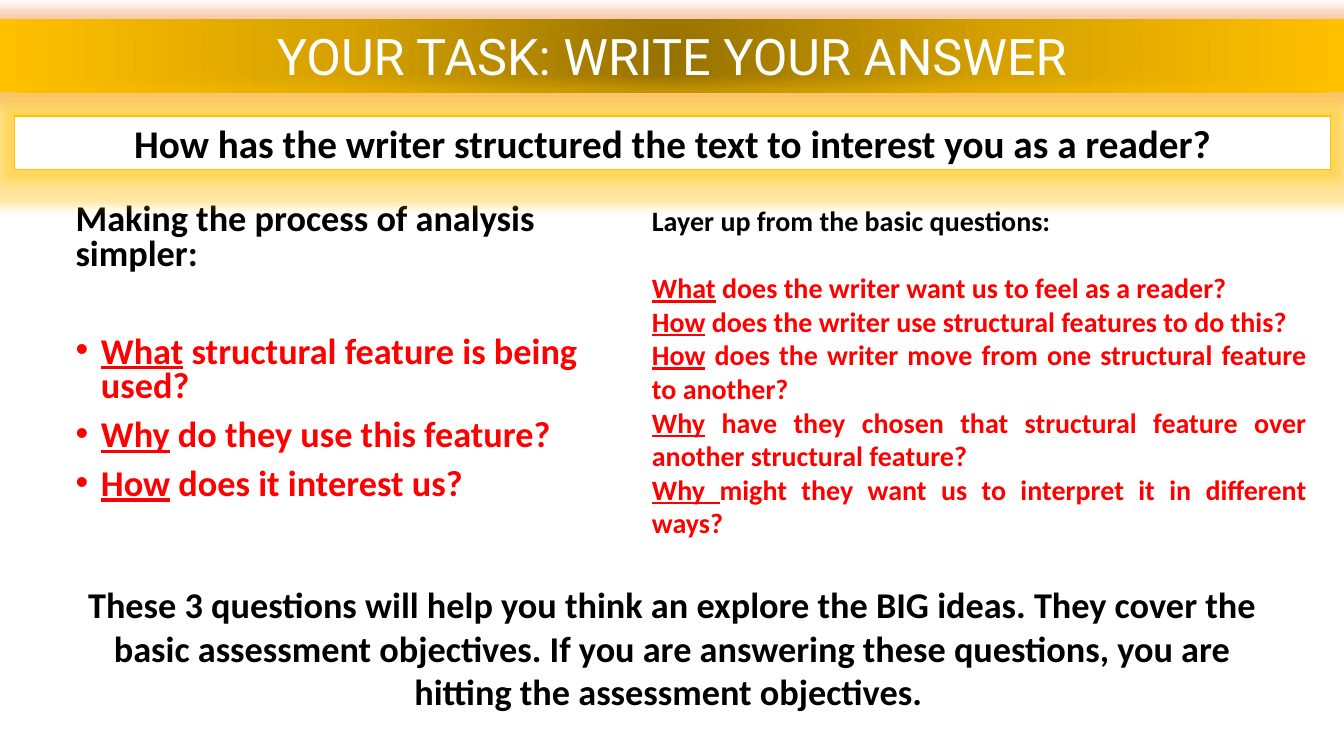
from lxml.etree import SubElement
from pptx import Presentation
from pptx.dml.color import RGBColor
from pptx.enum.shapes import MSO_SHAPE
from pptx.enum.text import MSO_ANCHOR, MSO_AUTO_SIZE, PP_ALIGN
from pptx.oxml.ns import qn
from pptx.util import Cm, Pt

BLACK, WHITE, RED, GOLD, ORANGE = "000000", "FFFFFF", "FF0000", "FFC000", "ED7D31"


def rgb(color):
    return RGBColor.from_string(color)


def place(sp, x, y, w, h):
    sp.left, sp.top, sp.width, sp.height = Cm(x), Cm(y), Cm(w), Cm(h)


def setup_frame(sp, anchor=MSO_ANCHOR.TOP):
    tf = sp.text_frame
    tf.word_wrap = True
    tf.auto_size = MSO_AUTO_SIZE.NONE
    tf.vertical_anchor = anchor
    return tf


def add_run(p, text, size, color=BLACK, font="Calibri", bold=True, underline=False):
    r = p.add_run()
    r.text = text
    r.font.name, r.font.size = font, Pt(size)
    r.font.bold, r.font.underline = bold, underline
    r.font.color.rgb = rgb(color)


def add_question(tf, key, rest, size):
    """Add a red paragraph that opens with an underlined question word."""
    p = tf.add_paragraph()
    add_run(p, key, size, RED, underline=True)
    add_run(p, rest, size, RED)
    return p


def add_glow(sp, color, radius, alpha):
    effects = SubElement(sp._element.spPr, qn("a:effectLst"))
    glow = SubElement(effects, qn("a:glow"), rad=str(Cm(radius)))
    clr = SubElement(glow, qn("a:srgbClr"), val=color)
    SubElement(clr, qn("a:alpha"), val=str(alpha * 1000))


def fill_radial(sp, stops):
    grad = SubElement(sp._element.spPr, qn("a:gradFill"), rotWithShape="1")
    gs_lst = SubElement(grad, qn("a:gsLst"))
    for pos, color in stops:
        gs = SubElement(gs_lst, qn("a:gs"), pos=str(pos * 1000))
        SubElement(gs, qn("a:srgbClr"), val=color)
    path = SubElement(grad, qn("a:path"), path="circle")
    SubElement(path, qn("a:fillToRect"), l="50000", t="50000", r="50000", b="50000")


def set_bullet(p, char=None, indent=0):
    pPr = p._p.get_or_add_pPr()
    pPr.set("marL", str(Cm(indent)))
    pPr.set("indent", str(-Cm(indent)))
    if char:
        SubElement(pPr, qn("a:buFont"), typeface="Arial")
        SubElement(pPr, qn("a:buChar"), char=char)
    else:
        SubElement(pPr, qn("a:buNone"))


def add_title(s):
    sp = s.shapes.title
    place(sp, 0, 0.48, 33.87, 1.85)
    fill_radial(sp, [(0, "977200"), (50, "D7A200"), (100, GOLD)])
    add_glow(sp, ORANGE, 0.6, 40)
    p = setup_frame(sp, MSO_ANCHOR.MIDDLE).paragraphs[0]
    p.alignment = PP_ALIGN.CENTER
    add_run(p, "YOUR TASK: WRITE YOUR ANSWER", 36, WHITE, "Roboto", bold=False)


def add_key_question(s, text):
    sp = s.shapes.add_shape(MSO_SHAPE.RECTANGLE, Cm(0.36), Cm(2.92), Cm(33.17), Cm(1.35))
    sp.fill.solid()
    sp.fill.fore_color.rgb = rgb(WHITE)
    sp.line.color.rgb = rgb(GOLD)
    sp.line.width = Pt(1)
    add_glow(sp, GOLD, 0.6, 40)
    p = setup_frame(sp, MSO_ANCHOR.MIDDLE).paragraphs[0]
    p.alignment = PP_ALIGN.CENTER
    add_run(p, text, 28)


def add_bullet_list(sp, heading, questions, size=25.9):
    place(sp, 1.65, 5, 13.59, 8.28)
    tf = setup_frame(sp)
    add_run(tf.paragraphs[0], heading, size)
    for key, rest in questions:
        add_question(tf, key, rest, size)
    for i, p in enumerate(tf.paragraphs):
        p.line_spacing = 0.8
        p.space_before = Pt(45 if i == 1 else 10)
        set_bullet(p, "•" if i else None, 0.64 if i else 0)


def add_text_box(s, x, y, w, h):
    return setup_frame(s.shapes.add_textbox(Cm(x), Cm(y), Cm(w), Cm(h)))


def add_layered_questions(s, heading, questions, size=20):
    tf = add_text_box(s, 16.18, 5, 17, 10.5)
    add_run(tf.paragraphs[0], heading, size)
    for key, rest in questions:
        add_question(tf, key, rest, size)
    for p in tf.paragraphs:
        p.alignment = PP_ALIGN.JUSTIFY
    tf.paragraphs[1].space_before = Pt(24)


def add_closing(s, text):
    tf = add_text_box(s, 1.65, 14.68, 30.6, 3.12)
    tf.margin_left = tf.margin_right = tf.margin_top = tf.margin_bottom = 0
    p = tf.paragraphs[0]
    p.alignment = PP_ALIGN.CENTER
    p.space_before = Pt(5)
    add_run(p, text, 25.9)


def main():
    prs = Presentation()
    prs.slide_width, prs.slide_height = Cm(33.87), Cm(19.05)
    s = prs.slides.add_slide(prs.slide_layouts[1])

    # Banners
    add_title(s)
    add_key_question(s, "How has the writer structured the text to interest you as a reader?")

    # Left column
    add_bullet_list(s.placeholders[1], "Making the process of analysis simpler:", [
        ("What", " structural feature is being used?"),
        ("Why", " do they use this feature?"),
        ("How", " does it interest us?"),
    ])

    # Closing statement
    add_closing(s, "These 3 questions will help you think an explore the BIG ideas. "
                   "They cover the basic assessment objectives. If you are answering "
                   "these questions, you are hitting the assessment objectives. ")

    # Right column
    add_layered_questions(s, "Layer up from the basic questions:", [
        ("What", " does the writer want us to feel as a reader?"),
        ("How", " does the writer use structural features to do this?"),
        ("How", " does the writer move from one structural feature to another?"),
        ("Why", " have they chosen that structural feature over another structural feature?"),
        ("Why ", "might they want us to interpret it in different ways?"),
    ])
    prs.save("out.pptx")


if __name__ == "__main__":
    main()
